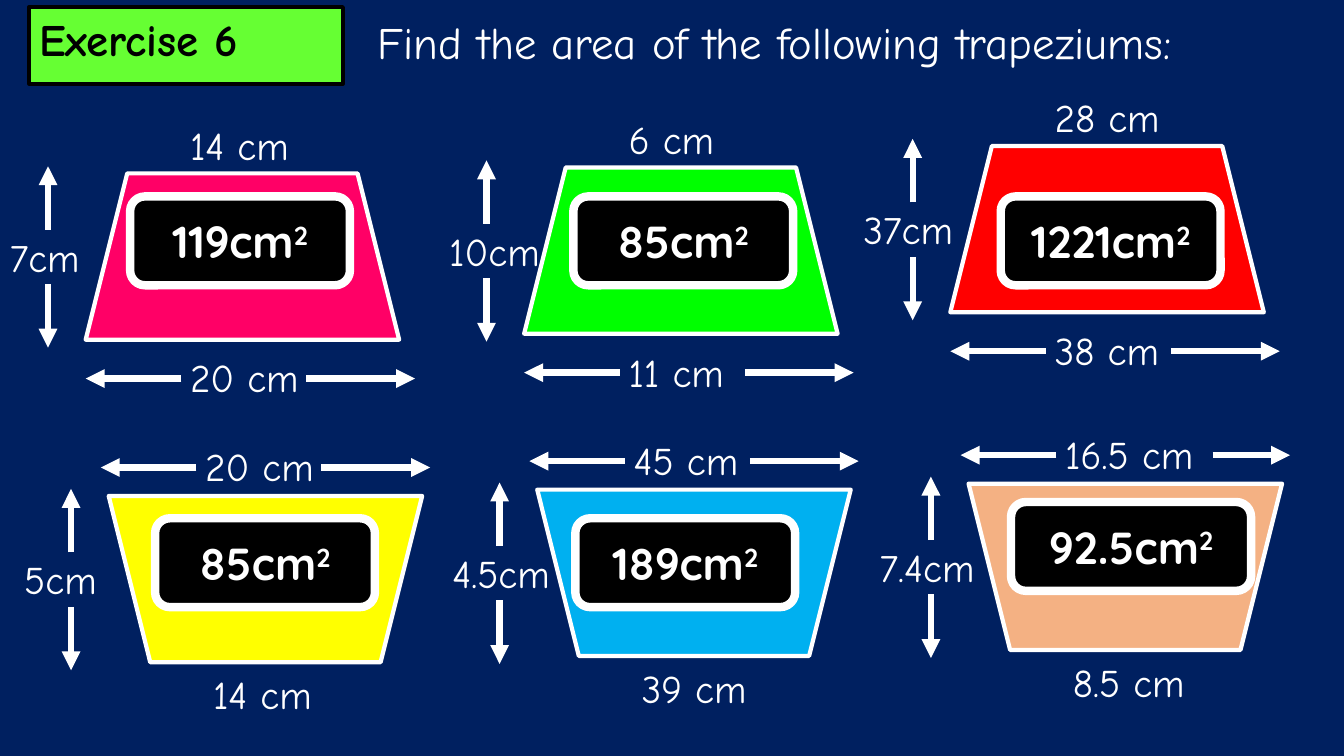
from pptx import Presentation
from pptx.dml.color import RGBColor
from pptx.enum.shapes import MSO_CONNECTOR, MSO_SHAPE
from pptx.enum.text import MSO_ANCHOR, MSO_AUTO_SIZE, PP_ALIGN
from pptx.oxml.ns import qn
from pptx.util import Cm, Pt
from lxml import etree


def color(value):
    return RGBColor.from_string(value)


def style_shape(s, fill, line, width):
    s.shadow.inherit = False
    s.fill.solid()
    s.fill.fore_color.rgb = color(fill)
    s.line.color.rgb = color(line)
    s.line.width = Pt(width)


prs = Presentation()
prs.slide_width, prs.slide_height = Cm(33.87), Cm(19.05)
slide = prs.slides.add_slide(prs.slide_layouts[6])
slide.background.fill.solid()
slide.background.fill.fore_color.rgb = color("002060")

# Exercise tag
tag = slide.shapes.add_shape(MSO_SHAPE.RECTANGLE, Cm(0.74), Cm(0.18), Cm(7.9), Cm(1.93))
style_shape(tag, "66FF33", "000000", 3)
tf = tag.text_frame
tf.vertical_anchor = MSO_ANCHOR.TOP
tf.text = "Exercise 6"
p = tf.paragraphs[0]
p.alignment = PP_ALIGN.LEFT
r = p.runs[0]
r.font.name, r.font.size, r.font.bold = "Comic Neue", Pt(32), True
r.font.color.rgb = color("000000")

# Trapeziums: left, top, fill, long side, short side, height, height label left, right arrow start
UP = [
    (2.16, 4.37, "FF0066", "20 cm", "14 cm", "7cm", 0, 5.56),
    (13.21, 4.22, "00FF00", "11 cm", "6 cm", "10cm", 11.07, 5.56),
    (23.95, 3.68, "FF0000", "38 cm", "28 cm", "37cm", 21.51, 5.56),
]
DOWN = [
    (2.74, 12.5, "FFFF00", "20 cm", "14 cm", "5cm", 0.36, 5.36),
    (13.54, 12.34, "00B0F0", "45 cm", "39 cm", "4.5cm", 11.15, 5.36),
    (24.41, 12.19, "F4B183", "16.5 cm", "8.5 cm", "7.4cm", 21.92, 6.15),
]
LABEL_WIDTHS = {
    "14 cm": 3.15, "11 cm": 3, "6 cm": 2.72, "16.5 cm": 4.01, "8.5 cm": 3.56,
    "7cm": 2.41, "5cm": 2.41, "10cm": 2.87, "37cm": 3.02, "4.5cm": 3.28, "7.4cm": 3.28,
}
labels = [(slide.shapes, "Find the area of the following trapeziums:", 9.27, 0.25, 32)]

for x, y, fill, long_side, short_side, height, height_x, right_start in UP + DOWN:
    flipped = y > 10
    shapes = slide.shapes.add_group_shape().shapes
    s = shapes.add_shape(MSO_SHAPE.TRAPEZOID, Cm(x), Cm(y), Cm(7.9), Cm(4.19))
    style_shape(s, fill, "FFFFFF", 3)
    if flipped:
        s._element.spPr.xfrm.set("flipV", "1")

    # Long side sits below an upright trapezium and above a flipped one
    shift = -0.2 if flipped else 0
    long_y, short_y, arrow_y = (-1.47, 4.27, -0.72) if flipped else (4.42, -1.45, 5.17)
    labels += [
        (shapes, long_side, x + 2.38 + shift, y + long_y, 28),
        (shapes, short_side, x + 2.38, y + short_y, 28),
        (slide.shapes, height, height_x, y + 1.38, 28),
    ]

    # Dimension arrows
    for x1, y1, x2, y2 in [
        (2.41 + shift, arrow_y, shift, arrow_y),
        (right_start, arrow_y, 8.3 + shift, arrow_y),
        (-0.95, 1.42, -0.95, -0.18),
        (-0.95, 2.79, -0.95, 4.39),
    ]:
        arrow = shapes.add_connector(
            MSO_CONNECTOR.STRAIGHT, Cm(x + x1), Cm(y + y1), Cm(x + x2), Cm(y + y2))
        arrow.line.color.rgb = color("FFFFFF")
        arrow.line.width = Pt(4.5)
        etree.SubElement(arrow.line._get_or_add_ln(), qn("a:tailEnd"), type="triangle")
        etree.SubElement(arrow._element.spPr, qn("a:effectLst"))

# Title and side labels
for shapes, text, x, y, size in labels:
    is_title = size == 32
    width, box_height = (23.85, 1.63) if is_title else (LABEL_WIDTHS.get(text, 3.33), 1.45)
    tf = shapes.add_textbox(Cm(x), Cm(y), Cm(width), Cm(box_height)).text_frame
    tf.word_wrap = is_title
    tf.auto_size = MSO_AUTO_SIZE.SHAPE_TO_FIT_TEXT
    tf.text = text
    r = tf.paragraphs[0].runs[0]
    r.font.name, r.font.size = "Comic Neue", Pt(size)
    r.font.color.rgb = color("FFFFFF")

# Answers
for text, x, y, width in [
    ("119cm", 3.28, 4.95, 5.54),
    ("85cm", 14.45, 4.95, 5.54),
    ("1221cm", 25.22, 4.95, 5.54),
    ("85cm", 3.91, 13.06, 5.54),
    ("189cm", 14.5, 13.06, 5.54),
    ("92.5cm", 25.48, 12.65, 6.05),
]:
    s = slide.shapes.add_shape(MSO_SHAPE.ROUNDED_RECTANGLE, Cm(x), Cm(y), Cm(width), Cm(2.24))
    style_shape(s, "000000", "FFFFFF", 6)
    tf = s.text_frame
    tf.vertical_anchor = MSO_ANCHOR.MIDDLE
    tf.text = text
    p = tf.paragraphs[0]
    p.alignment = PP_ALIGN.CENTER
    p.add_run().text = "2"
    for r in p.runs:
        r.font.name, r.font.size, r.font.bold = "Quicksand", Pt(32), True
        r.font.color.rgb = color("FFFFFF")
    p.runs[1].font._element.set("baseline", "30000")

prs.save("out.pptx")
